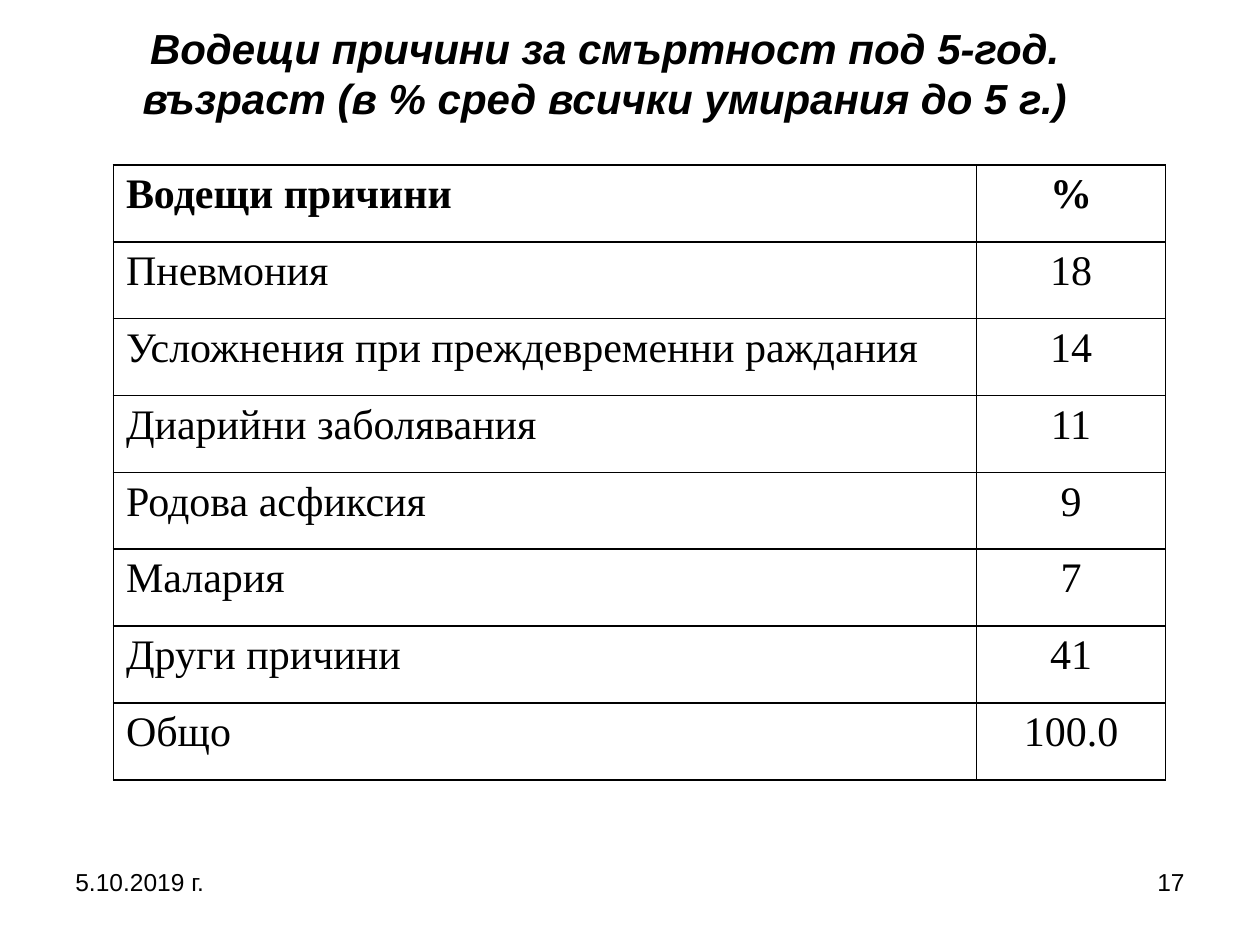
from lxml import etree
from pptx import Presentation
from pptx.dml.color import RGBColor
from pptx.enum import text
from pptx.oxml.ns import qn
from pptx.util import Inches, Pt

INK = "000000"
CAUSES = [
    ("Водещи причини", "%"),
    ("Пневмония", "18"),
    ("Усложнения при преждевременни раждания", "14"),
    ("Диарийни заболявания", "11"),
    ("Родова асфиксия", "9"),
    ("Малария", "7"),
    ("Други причини", "41"),
    ("Общо", "100.0"),
]


def color(hex_code):
    return RGBColor.from_string(hex_code)


def write(frame, content, size, font_name, align, bold=False, italic=False):
    frame.text = content
    frame.word_wrap = True
    paragraph = frame.paragraphs[0]
    paragraph.alignment = align
    font = paragraph.runs[0].font
    font.size, font.name = Pt(size), font_name
    font.bold, font.italic = bold, italic
    font.color.rgb = color(INK)


def add_title(slide, content):
    title = slide.shapes.title
    title.left, title.top = Inches(0.43), Inches(0.12)
    title.width, title.height = Inches(8.74), Inches(0.91)
    write(title.text_frame, content, 24, "Arial", text.PP_ALIGN.CENTER,
          bold=True, italic=True)
    title.text_frame.vertical_anchor = text.MSO_ANCHOR.MIDDLE


def add_footer(slide, content, left, align):
    footer = slide.shapes.add_textbox(
        Inches(left), Inches(6.83), Inches(2.33), Inches(0.52))
    write(footer.text_frame, content, 14, "Arial", align)


def outline_cell(cell, width=1):
    properties = cell._tc.get_or_add_tcPr()
    for side in ("lnL", "lnR", "lnT", "lnB"):
        line = etree.SubElement(properties, qn(f"a:{side}"), w=str(Pt(width)))
        fill = etree.SubElement(line, qn("a:solidFill"))
        etree.SubElement(fill, qn("a:srgbClr"), val=INK)


def add_causes_table(slide):
    table = slide.shapes.add_table(
        len(CAUSES), 2, Inches(0.9), Inches(1.31), Inches(8.35), Inches(4.88)).table
    table.horz_banding = False
    table.columns[0].width, table.columns[1].width = Inches(6.85), Inches(1.5)
    aligns = (text.PP_ALIGN.LEFT, text.PP_ALIGN.CENTER)
    for row, values in enumerate(CAUSES):
        for column, value in enumerate(values):
            cell = table.cell(row, column)
            outline_cell(cell)
            cell.fill.background()
            write(cell.text_frame, value, 24, "Times New Roman", aligns[column],
                  bold=row == 0)


def main():
    deck = Presentation()
    deck.slide_width, deck.slide_height = Inches(10), Inches(7.5)
    slide = deck.slides.add_slide(deck.slide_layouts[5])
    add_title(slide, "Водещи причини за смъртност под 5-год. "
                     "възраст (в % сред всички умирания до 5 г.)")
    add_causes_table(slide)
    add_footer(slide, "5.10.2019 г.", 0.5, text.PP_ALIGN.LEFT)
    add_footer(slide, "17", 7.17, text.PP_ALIGN.RIGHT)
    deck.save("out.pptx")


if __name__ == "__main__":
    main()
